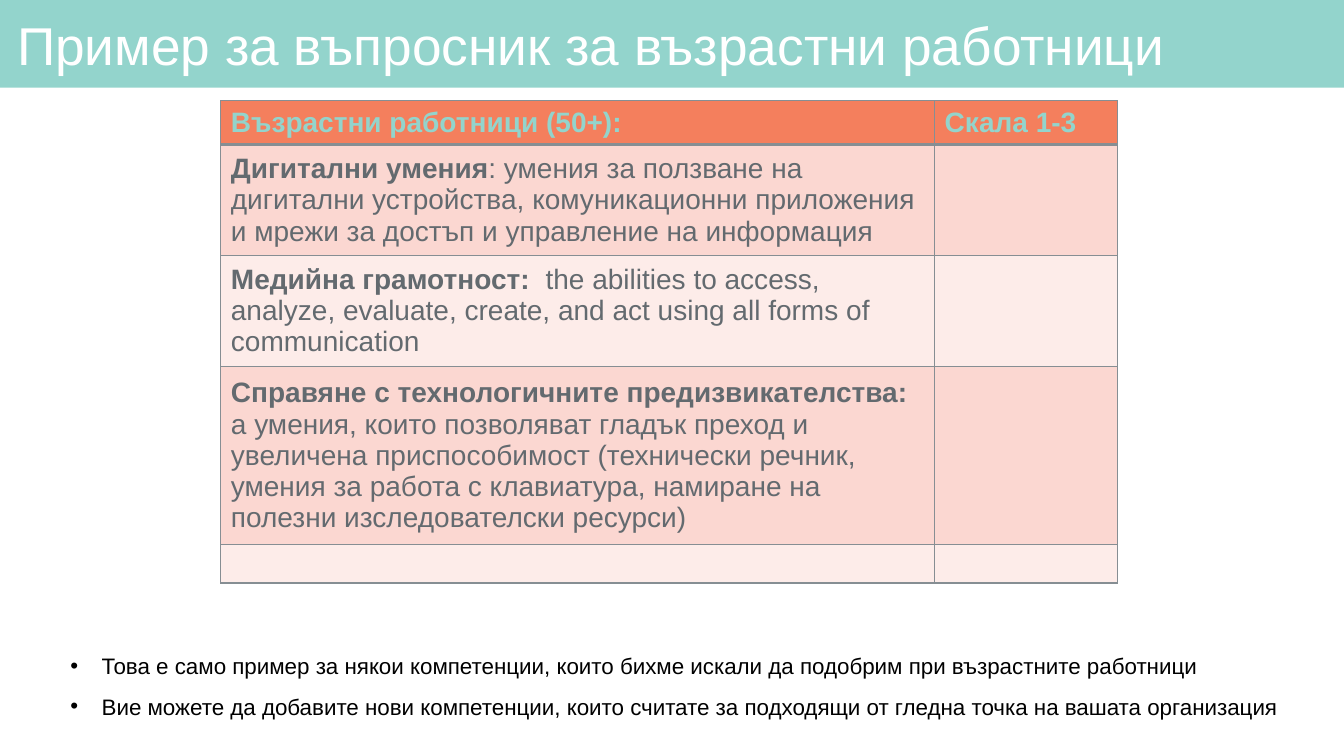
from lxml import etree
from pptx import Presentation
from pptx.dml.color import RGBColor
from pptx.enum import shapes, text
from pptx.oxml import ns
from pptx.util import Inches, Pt

TITLE = "Пример за въпросник за възрастни работници"
HEADER = ["Възрастни работници (50+):", "Скала 1-3"]
# (skill, description) for each row; the scale column stays open
SKILLS = [
    ("Дигитални умения", ": умения за ползване на дигитални устройства, "
     "комуникационни приложения и мрежи за достъп и управление на информация"),
    ("Медийна грамотност:", "  the abilities to access, analyze, evaluate, "
     "create, and act using all forms of communication"),
    ("Справяне с технологичните предизвикателства:",
     " а умения, които позволяват гладък преход и увеличена приспособимост "
     "(технически речник, умения за работа с клавиатура, намиране на полезни "
     "изследователски ресурси)"),
    None,
]
NOTES = [
    "Това е само пример за някои компетенции, които бихме искали да подобрим "
    "при възрастните работници",
    "Вие можете да добавите нови компетенции, които считате за подходящи от "
    "гледна точка на вашата организация",
]
COLUMN_WIDTHS = [7.08, 1.81]
ROW_HEIGHTS = [0.41, 1.03, 1.03, 1.66, 0.38]

TEAL = RGBColor(0x93, 0xD4, 0xCC)
ORANGE = RGBColor(0xF4, 0x7F, 0x5D)
BANDS = [RGBColor(0xFB, 0xD7, 0xD1), RGBColor(0xFD, 0xEC, 0xE9)]
SLATE = RGBColor(0x63, 0x6A, 0x6F)
BORDER = RGBColor(0x86, 0x8E, 0x93)
WHITE = RGBColor(0xFF, 0xFF, 0xFF)
BLACK = RGBColor(0, 0, 0)


def add_span(para, words, size, color, bold=False):
    span = para.add_run()
    span.text = words
    span.font.name = "Arial"
    span.font.size = Pt(size)
    span.font.bold = bold
    span.font.color.rgb = color


def add_text_box(page, left, top, width, height):
    frame = page.shapes.add_textbox(
        Inches(left), Inches(top), Inches(width), Inches(height)).text_frame
    frame.word_wrap = True
    return frame


def style_cell(cell, fill, widths):
    """Fill the cell and draw its borders; widths maps each side to points."""
    cell.vertical_anchor = text.MSO_ANCHOR.MIDDLE
    props = cell._tc.get_or_add_tcPr()
    for side, width in widths.items():
        line = etree.SubElement(props, ns.qn(f"a:ln{side}"), w=str(Pt(width)))
        solid = etree.SubElement(line, ns.qn("a:solidFill"))
        etree.SubElement(solid, ns.qn("a:srgbClr"), val=str(BORDER))
    cell.fill.solid()
    cell.fill.fore_color.rgb = fill


def add_title(page):
    band = page.shapes.add_shape(
        shapes.MSO_SHAPE.RECTANGLE, 0, 0, Inches(13.33), Inches(0.87))
    band.shadow.inherit = False
    band.fill.solid()
    band.fill.fore_color.rgb = TEAL
    band.line.fill.background()

    frame = add_text_box(page, 0.11, 0.09, 13.06, 0.78)
    frame.margin_left = frame.margin_right = Inches(0.06)
    frame.margin_top = frame.margin_bottom = Inches(0.06)
    frame.vertical_anchor = text.MSO_ANCHOR.MIDDLE
    para = frame.paragraphs[0]
    para.line_spacing = 0.9
    add_span(para, TITLE, 38, WHITE)


def add_questionnaire(page):
    table = page.shapes.add_table(
        len(ROW_HEIGHTS), len(COLUMN_WIDTHS), Inches(2.19), Inches(1),
        Inches(sum(COLUMN_WIDTHS)), Inches(sum(ROW_HEIGHTS))).table
    for column, width in zip(table.columns, COLUMN_WIDTHS):
        column.width = Inches(width)
    for row, height in zip(table.rows, ROW_HEIGHTS):
        row.height = Inches(height)

    for index, row in enumerate(table.rows):
        fill = BANDS[(index - 1) % 2] if index else ORANGE
        widths = {"L": 1, "R": 1, "T": 3 if index == 1 else 1,
                  "B": 1 if index else 3}
        for cell in row.cells:
            style_cell(cell, fill, widths)

    for column, heading in enumerate(HEADER):
        para = table.cell(0, column).text_frame.paragraphs[0]
        add_span(para, heading, 20, TEAL, bold=True)
    for index, skill in enumerate(SKILLS, start=1):
        if skill:
            name, description = skill
            para = table.cell(index, 0).text_frame.paragraphs[0]
            add_span(para, name, 20, SLATE, bold=True)
            add_span(para, description, 20, SLATE)
        else:
            for cell in table.rows[index].cells:
                cell.margin_top = cell.margin_bottom = Inches(0.04)


def add_notes(page):
    frame = add_text_box(page, 0.6, 6.29, 12.51, 0.91)
    for index, note in enumerate(NOTES):
        para = frame.add_paragraph() if index else frame.paragraphs[0]
        para.line_spacing = 1.5
        props = para._p.get_or_add_pPr()
        props.set("marL", str(Inches(0.31)))
        props.set("indent", str(-Inches(0.31)))
        color = etree.SubElement(props, ns.qn("a:buClr"))
        etree.SubElement(color, ns.qn("a:srgbClr"), val=str(BLACK))
        etree.SubElement(props, ns.qn("a:buFont"), typeface="Arial")
        etree.SubElement(props, ns.qn("a:buChar"), char="•")
        add_span(para, note, 16, BLACK)


def main():
    deck = Presentation()
    deck.slide_width, deck.slide_height = Inches(13.33), Inches(7.5)
    page = deck.slides.add_slide(deck.slide_layouts[6])
    add_title(page)
    add_questionnaire(page)
    add_notes(page)
    deck.save("out.pptx")


if __name__ == "__main__":
    main()
